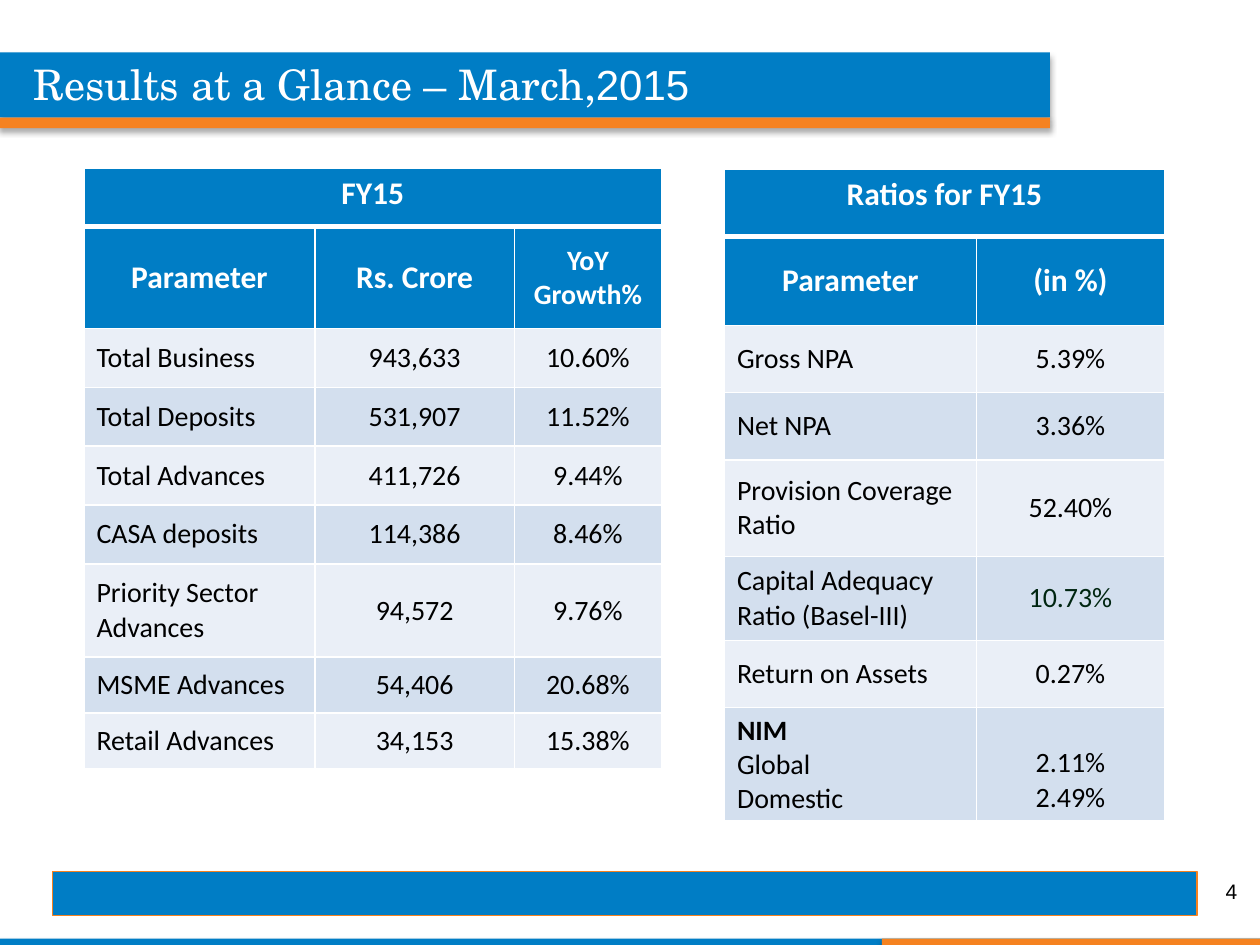
from lxml import etree
from pptx import Presentation, util as u
from pptx.dml.color import RGBColor
from pptx.enum import shapes, text
from pptx.oxml import parse_xml
from pptx.oxml.ns import nsdecls, qn

BLUE, ORANGE, WHITE, BLACK = "007DC5", "F58220", "FFFFFF", "000000"
DARK_GREEN = "002611"
BANDS = ("EAEFF7", "D3DFEE")
LEFT, CENTER, RIGHT = (text.PP_ALIGN.LEFT, text.PP_ALIGN.CENTER,
                       text.PP_ALIGN.RIGHT)
MIDDLE, TOP, BOTTOM = (text.MSO_ANCHOR.MIDDLE, text.MSO_ANCHOR.TOP,
                       text.MSO_ANCHOR.BOTTOM)


def color(hex_code):
    return RGBColor.from_string(hex_code)


def grid(units):
    """Length on a grid of 120 columns by 90 rows, 12 to the inch."""
    return u.Inches(units / 12)


class Slide:
    table_font = "Calibri"

    def __init__(self, deck):
        self.page = deck.slides.add_slide(deck.slide_layouts[6])

    def bar(self, left, top, width, height, fill, line=None):
        bar = self.page.shapes.add_shape(
            shapes.MSO_SHAPE.RECTANGLE, *map(grid, (left, top, width, height)))
        bar.shadow.inherit = False
        bar.fill.solid()
        bar.fill.fore_color.rgb = color(fill)
        if line:
            bar.line.color.rgb = color(line)
            bar.line.width = u.Pt(0.75)
        else:
            bar.line.fill.background()
        return bar

    def shaded_bar(self, *args):
        bar = self.bar(*args)
        effects = bar._element.spPr.find(qn("a:effectLst"))
        effects.append(parse_xml(
            f'<a:outerShdw {nsdecls("a")} blurRad="{u.Pt(3.5)}" '
            f'dist="{u.Pt(2.2)}" dir="5400000" rotWithShape="0">'
            f'<a:srgbClr val="{BLACK}"><a:alpha val="32000"/></a:srgbClr>'
            '</a:outerShdw>'))

    def span(self, para, words, size, font, hex_code, bold=False):
        span = para.add_run()
        span.text = words
        span.font.size = u.Pt(size)
        span.font.name = font
        span.font.bold = bold
        span.font.color.rgb = color(hex_code)

    def label(self, left, top, width, height, spans, size, hex_code,
              align=LEFT, anchor=TOP):
        box = self.page.shapes.add_textbox(
            *map(grid, (left, top, width, height)))
        frame = box.text_frame
        frame.word_wrap = True
        frame.vertical_anchor = anchor
        para = frame.paragraphs[0]
        para.alignment = align
        for words, font in spans:
            self.span(para, words, size, font, hex_code)

    def borders(self, cell, top=1, bottom=1):
        props = cell._tc.get_or_add_tcPr()
        sides = (("L", 1), ("R", 1), ("T", top), ("B", bottom))
        for place, (side, width) in enumerate(sides):
            line = etree.Element(qn(f"a:ln{side}"), w=str(u.Pt(width)))
            fill = etree.SubElement(line, qn("a:solidFill"))
            etree.SubElement(fill, qn("a:srgbClr"), val=WHITE)
            props.insert(place, line)

    def fill_cell(self, cell, lines, size, hex_code, align, bold_lines=0):
        frame = cell.text_frame
        for index, words in enumerate(lines):
            para = frame.add_paragraph() if index else frame.paragraphs[0]
            para.alignment = align
            self.span(para, words, size, self.table_font, hex_code,
                      index < bold_lines)

    def table(self, left, top, columns, heights, title, heads, body):
        """Title row across all columns, a row of heads, then banded rows."""
        table = self.page.shapes.add_table(
            len(heights), len(columns), grid(left), grid(top),
            grid(sum(columns)), grid(sum(heights))).table
        table.first_row = table.horz_banding = False
        for column, width in zip(table.columns, columns):
            column.width = grid(width)
        for row, height in zip(table.rows, heights):
            row.height = grid(height)
        for r, row in enumerate(table.rows):
            for cell in row.cells:
                cell.fill.solid()
                cell.fill.fore_color.rgb = color(BLUE if r < 2 else BANDS[r % 2])
                cell.vertical_anchor = MIDDLE if r else TOP
                self.borders(cell, top=3 if r == 1 else 1,
                             bottom=1 if r else 3)
        table.cell(0, 0).merge(table.cell(0, len(columns) - 1))
        self.fill_cell(table.cell(0, 0), [title], 18, WHITE, CENTER, 1)
        for c, head in enumerate(heads):
            lines = head.split("\n")
            self.fill_cell(table.cell(1, c), lines, 18 if len(lines) == 1 else 16,
                           WHITE, CENTER, len(lines))
        for r, values in enumerate(body, 2):
            for c, value in enumerate(values):
                self.fill_cell(table.cell(r, c), value.split("\n"), 16, BLACK,
                               CENTER if c else LEFT)
        return table


deck = Presentation()
deck.slide_width, deck.slide_height = grid(120), grid(90)
slide = Slide(deck)

# Footer strip, title band and footer bar
slide.shaded_bar(0, 89.4, 120, 0.6, BLUE)
slide.shaded_bar(84, 89.4, 36, 0.6, ORANGE)
slide.shaded_bar(0, 5, 100, 6.2, BLUE)
slide.shaded_bar(0, 11.2, 100, 1, ORANGE)
slide.bar(5, 83, 109, 4.2, BLUE, ORANGE)

# Title and page number
slide.label(2, 5, 81, 6, [("Results at a Glance – March,", "TeX Gyre Schola"),
                          ("2015", "Arial")], 24, WHITE)
slide.label(91, 82.5, 28, 4.8, [("4", "Arial")], 12, BLACK, RIGHT, MIDDLE)

# Business figures
slide.table(
    8, 16, [22, 19, 14], [5.6, 9.7] + [5.6] * 4 + [8.9, 5.3, 5.3],
    "FY15", ["Parameter", "Rs. Crore", "YoY\nGrowth%"],
    [("Total Business", "943,633", "10.60%"),
     ("Total Deposits", "531,907", "11.52%"),
     ("Total Advances", "411,726", "9.44%"),
     ("CASA deposits", "114,386", "8.46%"),
     ("Priority Sector Advances", "94,572", "9.76%"),
     ("MSME Advances", "54,406", "20.68%"),
     ("Retail Advances", "34,153", "15.38%")])

# Ratios
ratios = slide.table(
    69, 16.1, [24, 17.9], [6.4, 8.5, 6.4, 6.4, 9.2, 8, 6.4, 10.7],
    "Ratios for FY15", ["Parameter", "(in %)"],
    [("Gross NPA", "5.39%"),
     ("Net NPA", "3.36%"),
     ("Provision Coverage Ratio", "52.40%"),
     ("Capital Adequacy Ratio (Basel-III)", "10.73%"),
     ("Return on Assets", "0.27%"),
     ("NIM\nGlobal\nDomestic", "2.11%\n2.49%")])
adequacy = ratios.cell(5, 1).text_frame.paragraphs[0].runs[0]
adequacy.font.color.rgb = color(DARK_GREEN)
margin_heading = ratios.cell(7, 0).text_frame.paragraphs[0].runs[0]
margin_heading.font.bold = True
ratios.cell(7, 1).vertical_anchor = BOTTOM

deck.save("out.pptx")
